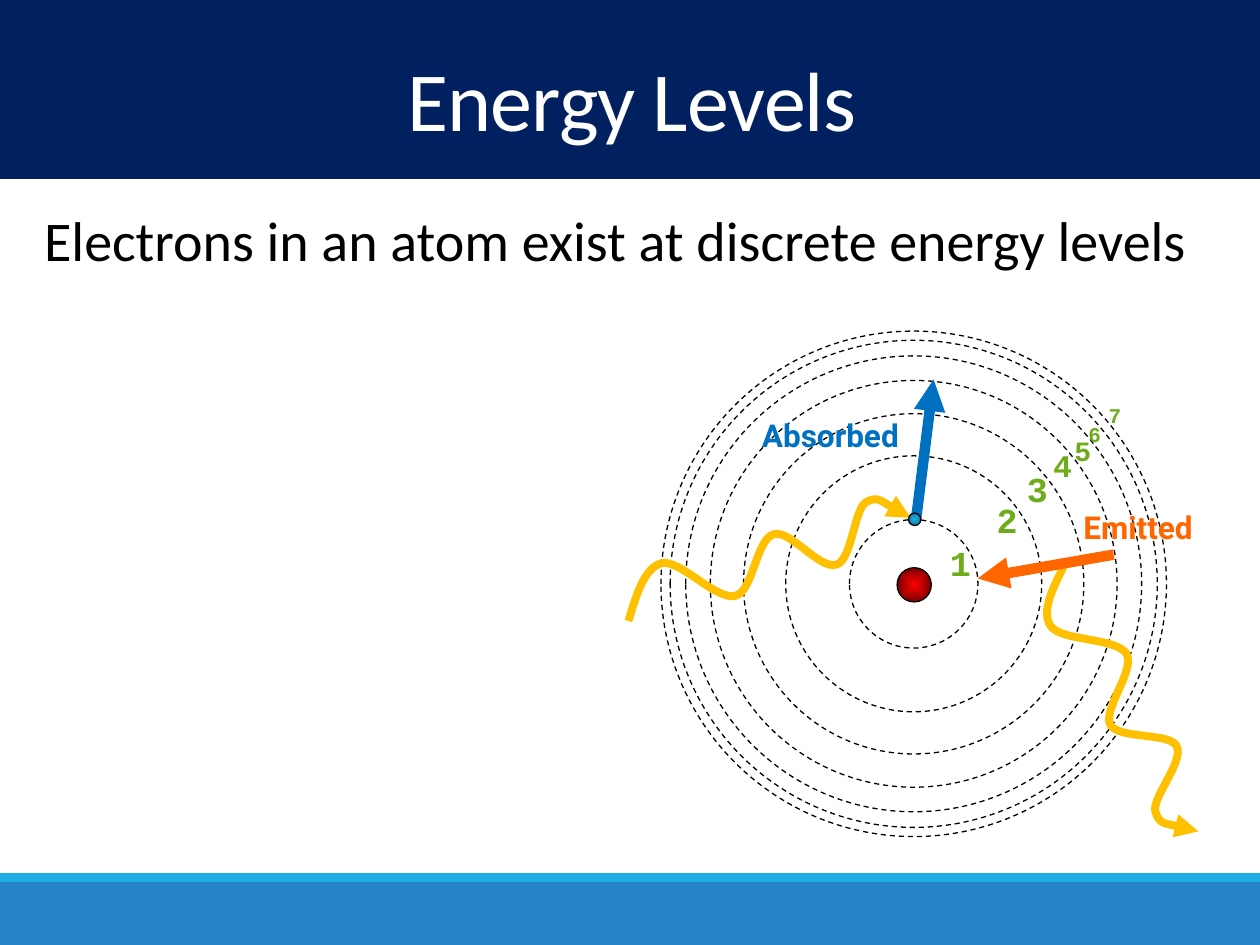
from dataclasses import dataclass

from lxml.etree import SubElement
from pptx import Presentation
from pptx.dml.color import RGBColor
from pptx.enum.dml import MSO_LINE
from pptx.enum.shapes import MSO_CONNECTOR, MSO_SHAPE
from pptx.enum.text import MSO_ANCHOR, PP_ALIGN
from pptx.oxml.ns import qn
from pptx.util import Cm, Pt


@dataclass(frozen=True)
class Theme:
    """Colours, fonts and type sizes of the slide."""

    navy: str = "002060"
    footer: str = "2683C6"
    accent: str = "1CADE4"
    accent_dark: str = "147CA3"
    white: str = "FFFFFF"
    black: str = "000000"
    nucleus: str = "FF0000"
    nucleus_dark: str = "760000"
    level: str = "6EAC1C"
    absorbed: str = "0070C0"
    emitted: str = "FF6600"
    photon: str = "FFC000"
    text_font: str = "Calibri"
    level_font: str = "Courier New"
    label_font: str = "Roboto"
    title_size: int = 48
    body_size: int = 32
    label_size: int = 18
    level_sizes: tuple = (20, 20, 20, 18, 16, 12, 12)


THEME = Theme()

RING_DIAMETERS = (2.59, 5.16, 6.86, 8.2, 9.19, 9.82, 10.19)
LEVEL_OFFSETS = (
    (0.48, -0.98), (1.42, -1.84), (2.03, -2.47), (2.56, -2.91),
    (2.99, -3.16), (3.27, -3.39), (3.68, -3.77),
)
INCOMING_PHOTON = (
    (-5.75, 0.75), (-5.59, 0.22), (-5.44, -0.31), (-5.08, -0.42),
    (-4.7, -0.49), (-3.97, 0.35), (-3.59, 0.24),
    (-3.23, 0.14), (-3.18, -0.9), (-2.82, -1),
    (-2.49, -1.1), (-1.88, -0.26), (-1.55, -0.39),
    (-1.25, -0.49), (-1.2, -1.48), (-0.97, -1.64),
    (-0.72, -1.79), (-0.13, -1.36), (-0.06, -1.33),
)
OUTGOING_PHOTON = (
    (3.07, -0.44), (2.81, 0.07), (2.56, 0.55), (2.76, 0.85),
    (2.97, 1.16), (4.08, 1.08), (4.29, 1.41),
    (4.47, 1.74), (3.81, 2.53), (3.96, 2.84),
    (4.14, 3.14), (5.15, 2.99), (5.3, 3.27),
    (5.46, 3.57), (4.8, 4.31), (4.87, 4.59),
    (4.95, 4.87), (5.66, 4.97), (5.74, 4.99),
)


def set_attributes(target, values):
    """Set each named attribute of the target."""
    for name, value in values.items():
        setattr(target, name, value)


def color(code):
    """Turn a hex code into a colour."""
    return RGBColor.from_string(code)


def add_band(slide, box, fill):
    """Add a plain filled rectangle."""
    shape = slide.shapes.add_shape(MSO_SHAPE.RECTANGLE, *map(Cm, box))
    shape.shadow.inherit = False
    shape.fill.solid()
    shape.fill.fore_color.rgb = color(fill)
    shape.line.fill.background()


def add_text(slide, box, text, font_values, fill, paragraph_values=None, frame_values=None):
    """Add a one-line text box and return its run."""
    frame = slide.shapes.add_textbox(*map(Cm, box)).text_frame
    set_attributes(frame, {"word_wrap": True, **(frame_values or {})})
    paragraph = frame.paragraphs[0]
    set_attributes(paragraph, paragraph_values or {})
    run = paragraph.add_run()
    run.text = text
    set_attributes(run.font, font_values)
    run.font.color.rgb = color(fill)
    return run


def add_circle(slide, center, diameter, gradient=None):
    """Add a centred circle: a dashed ring, or a ball with a radial gradient."""
    left, top = (value - diameter / 2 for value in center)
    shape = slide.shapes.add_shape(MSO_SHAPE.OVAL, *map(Cm, (left, top, diameter, diameter)))
    shape.shadow.inherit = False
    shape.line.color.rgb = color(THEME.black)
    shape.line.width = Pt(0.75)
    if gradient is None:
        shape.fill.background()
        shape.line.dash_style = MSO_LINE.DASH
        return
    shape.fill.gradient()
    for stop, code in zip(shape.fill.gradient_stops, gradient):
        stop.color.rgb = color(code)
    gradient_fill = shape.element.spPr.find(qn("a:gradFill"))
    gradient_fill.remove(gradient_fill.find(qn("a:lin")))
    radial = SubElement(gradient_fill, qn("a:path"), {"path": "shape"})
    SubElement(radial, qn("a:fillToRect"), dict.fromkeys("ltrb", "50000"))


def style_arrow(shape, fill, width):
    """Give a line its colour, width and end arrowhead, without a shadow."""
    shape.line.color.rgb = color(fill)
    shape.line.width = Pt(width)
    SubElement(shape.line._get_or_add_ln(), qn("a:tailEnd"), {"type": "triangle"})
    properties = shape.element.spPr
    if properties.find(qn("a:effectLst")) is None:
        SubElement(properties, qn("a:effectLst"))


def add_arrow(slide, start, end, fill):
    """Add a thick straight arrow."""
    shape = slide.shapes.add_connector(MSO_CONNECTOR.STRAIGHT, *map(Cm, (*start, *end)))
    style_arrow(shape, fill, 6)


def add_photon(slide, points):
    """Add a wavy arrow through Bezier points, three for each curve."""
    start, *rest = [tuple(map(Cm, point)) for point in points]
    builder = slide.shapes.build_freeform(*start)
    builder.add_line_segments(rest, close=False)
    shape = builder.convert_to_shape()
    shape.fill.background()
    segments = list(shape.element.iter(qn("a:lnTo")))
    outline = segments[0].getparent()
    for index in range(0, len(segments), 3):
        curve = SubElement(outline, qn("a:cubicBezTo"))
        for segment in segments[index:index + 3]:
            curve.append(segment[0])
            outline.remove(segment)
    style_arrow(shape, THEME.photon, 4.5)


def add_header(slide, box):
    """Add the title band with its title."""
    left, top, width, height = box
    add_band(slide, box, THEME.navy)
    run = add_text(
        slide, (left + 0.08, top + 1.07, width - 0.08, 2.13), "Energy Levels",
        {"name": THEME.text_font, "size": Pt(THEME.title_size)}, THEME.white,
        {"alignment": PP_ALIGN.CENTER, "line_spacing": 0.85},
        {"vertical_anchor": MSO_ANCHOR.MIDDLE},
    )
    run.font._element.set("spc", "-50")


def add_footer(slide, box):
    """Add the footer band with a thin stripe along its top."""
    left, top, width, height = box
    stripe = 0.18
    add_band(slide, (left, top + stripe, width, height - stripe), THEME.footer)
    add_band(slide, (left, top, width, stripe), THEME.accent)


def add_atom(slide, box):
    """Add the atom with its levels, photons and electron jumps."""
    left, top, width, height = box

    def place(offset):
        """Move an offset from the nucleus onto the slide."""
        return left + width / 2 + offset[0], top + height / 2 + offset[1]

    def add_label(offset, label_width, text, fill):
        """Add the bold name of an electron jump."""
        add_text(slide, (*place(offset), label_width, 1.02), text,
                 {"name": THEME.label_font, "size": Pt(THEME.label_size), "bold": True},
                 fill, frame_values={"word_wrap": False})

    add_circle(slide, place((0.01, 0.02)), 0.69, (THEME.nucleus, THEME.nucleus_dark))
    for diameter in RING_DIAMETERS:
        add_circle(slide, place((0, 0)), diameter)
    for number, (offset, size) in enumerate(zip(LEVEL_OFFSETS, THEME.level_sizes), 1):
        add_text(slide, (*place(offset), 1.19, 0.25 + size * 0.04), str(number),
                 {"name": THEME.level_font, "size": Pt(size), "bold": True},
                 THEME.level, {"space_before": Pt(2)})
    add_arrow(slide, place((0.05, -1.33)), place((0.4, -4.12)), THEME.absorbed)
    add_label((-3.31, -3.51), 3.43, "Absorbed", THEME.absorbed)
    add_photon(slide, map(place, INCOMING_PHOTON))
    add_circle(slide, place((0.02, -1.3)), 0.25, (THEME.accent, THEME.accent_dark))
    add_photon(slide, map(place, OUTGOING_PHOTON))
    add_label((3.17, -1.66), 2.87, "Emitted", THEME.emitted)
    add_arrow(slide, place((4.03, -0.59)), place((1.29, -0.11)), THEME.emitted)


def main():
    """Build and save the slide."""
    presentation = Presentation()
    set_attributes(presentation, {"slide_width": Cm(25.4), "slide_height": Cm(19.05)})
    slide = presentation.slides.add_slide(presentation.slide_layouts[6])
    add_footer(slide, (0, 17.6, 25.4, 1.45))
    add_header(slide, (0, 0, 25.4, 3.61))
    add_text(slide, (0.64, 4.01, 24.16, 1.63),
             "Electrons in an atom exist at discrete energy levels",
             {"name": THEME.text_font, "size": Pt(THEME.body_size)}, THEME.black)
    add_atom(slide, (12.42, 6.67, 12, 10.2))
    presentation.save("out.pptx")


if __name__ == "__main__":
    main()
